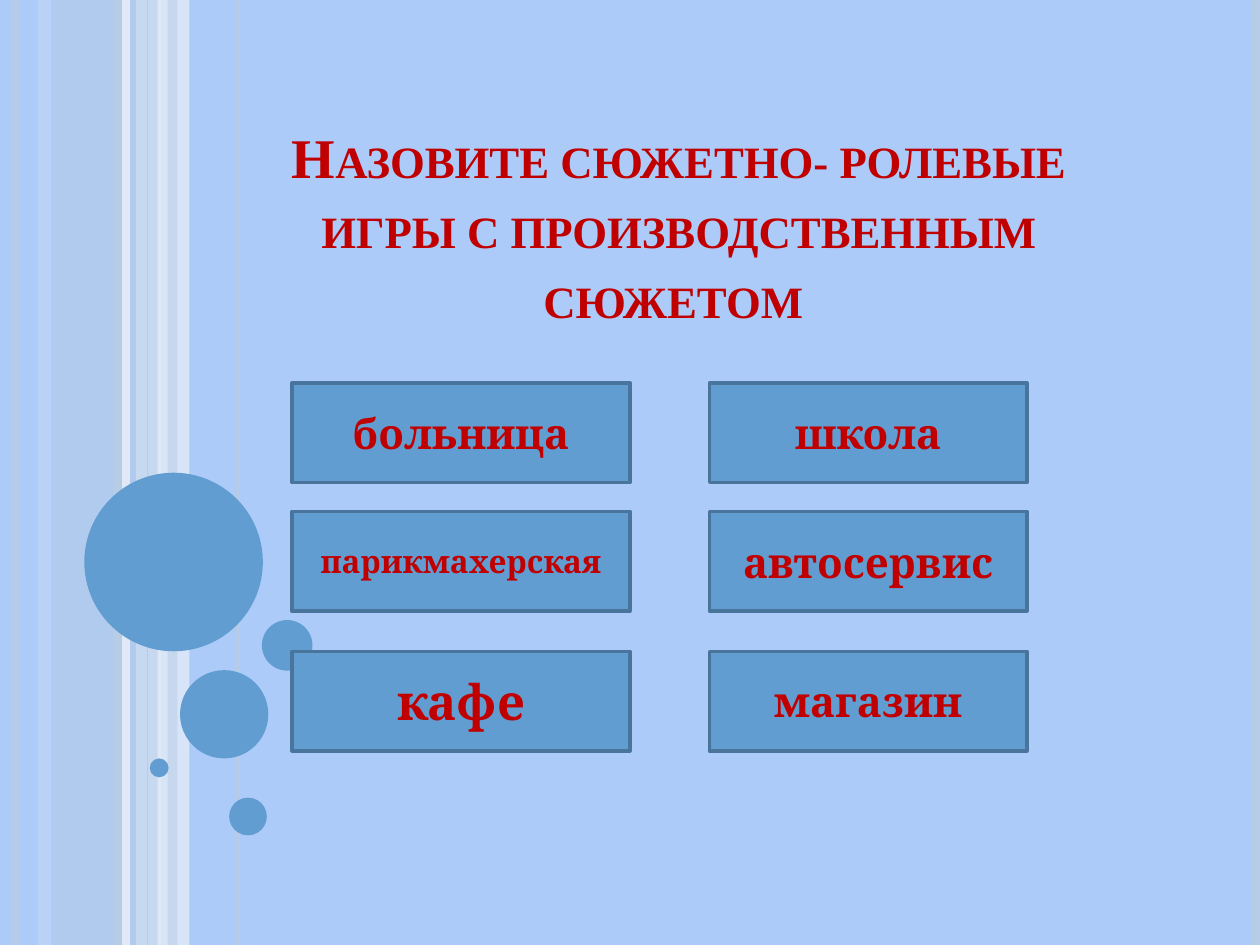
from pptx import Presentation
from pptx.dml.color import RGBColor
from pptx.enum.shapes import MSO_CONNECTOR, MSO_SHAPE
from pptx.enum.text import MSO_ANCHOR, MSO_AUTO_SIZE, PP_ALIGN
from pptx.oxml.ns import qn
from pptx.util import Cm, Pt
from lxml.etree import SubElement

# Content
TITLE = "Назовите сюжетно- ролевые игры с производственным сюжетом\u00a0"
GAMES = [  # rows of (name, text size)
    [("больница", 24), ("школа", 24)],
    [("парикмахерская", 18), ("автосервис", 24)],
    [("кафе", 28), ("магазин", 24)],
]

# Layout in centimetres
WIDTH, HEIGHT = 25.4, 19.05
TITLE_BOX = {"left": 5.11, "top": 1.52, "width": 17.15, "height": 5.26}
COLUMNS = [(5.89, 6.81), (14.3, 6.4)]  # left, width
ROW_TOPS = [7.72, 10.31, 13.13]
BOX_HEIGHT = 2.01
BANDS = [  # left, width, colour, opacity %
    (1.07, 1.7, "B7CCE5", 54),
    (0.76, 0.28, "D3DFEE", 36),
    (2.74, 0.51, "D3DFEE", 70),
    (3.18, 0.64, "EAEFF7", 71),
]
STRIPES = [  # x, line width in points, colour, opacity %
    (0.3, 4.5, "B7CCE5", 73),
    (2.54, 4.5, "EAEFF7", 83),
    (2.36, 4.5, "B7CCE5", 100),
    (4.8, 2.25, "B7CCE5", 82),
    (2.97, 0.75, "B7CCE5", 100),
    (25.32, 4.5, "B7CCE5", 100),
]
FRONT_BAND = (3.38, 0.2, "B7CCE5", 51)
CIRCLES = [  # left, top, diameter
    (1.7, 9.53, 3.6),
    (3.63, 13.51, 1.78),
    (3.02, 15.29, 0.38),
    (4.62, 16.08, 0.76),
    (5.28, 12.5, 1.02),
]
BACKGROUND, BLUE, BORDER, RED = "ACCBF9", "629DD1", "49749B", "C00000"


def paint(fill, colour, opacity=100):
    fill.solid()
    fill.fore_color.rgb = RGBColor.from_string(colour)
    if opacity < 100:
        colour_element = fill._xPr.find(qn("a:solidFill"))[0]
        SubElement(colour_element, qn("a:alpha"), val=str(opacity * 1000))


def add_plain_shape(kind, left, top, width, height, colour, opacity=100):
    shape = slide.shapes.add_shape(kind, Cm(left), Cm(top), Cm(width), Cm(height))
    shape.shadow.inherit = False
    paint(shape.fill, colour, opacity)
    shape.line.fill.background()
    return shape


def add_band(left, width, colour, opacity):
    add_plain_shape(MSO_SHAPE.RECTANGLE, left, 0, width, HEIGHT, colour, opacity)


def write(frame, text, font_name, size, anchor):
    frame.word_wrap = True
    frame.auto_size = MSO_AUTO_SIZE.NONE
    frame.vertical_anchor = anchor
    paragraph = frame.paragraphs[0]
    paragraph.alignment = PP_ALIGN.CENTER
    run = paragraph.add_run()
    run.text = text
    for name, value in {"name": font_name, "size": Pt(size), "bold": True}.items():
        setattr(run.font, name, value)
    paint(run.font.fill, RED)
    return run


presentation = Presentation()
presentation.slide_width, presentation.slide_height = Cm(WIDTH), Cm(HEIGHT)
slide = presentation.slides.add_slide(presentation.slide_layouts[5])
paint(slide.background.fill, BACKGROUND)

# Vertical bands and stripes
for band in BANDS:
    add_band(*band)
for x, weight, colour, opacity in STRIPES:
    stripe = slide.shapes.add_connector(
        MSO_CONNECTOR.STRAIGHT, Cm(x), Cm(0), Cm(x), Cm(HEIGHT))
    stripe.line.width = Pt(weight)
    paint(stripe.line.fill, colour, opacity)
    SubElement(stripe._element.spPr, qn("a:effectLst"))
add_band(*FRONT_BAND)

# Circles
for left, top, diameter in CIRCLES:
    add_plain_shape(MSO_SHAPE.OVAL, left, top, diameter, diameter, BLUE)

# Title in small capitals
title = slide.shapes.title
for name, value in TITLE_BOX.items():
    setattr(title, name, Cm(value))
title_run = write(title.text_frame, TITLE, "Times New Roman", 32, MSO_ANCHOR.BOTTOM)
title_run._r.get_or_add_rPr().set("cap", "small")
title.text_frame.paragraphs[0].line_spacing = 1.04

# Grid of games
for top, row in zip(ROW_TOPS, GAMES):
    for (left, width), (game, size) in zip(COLUMNS, row):
        box = add_plain_shape(
            MSO_SHAPE.RECTANGLE, left, top, width, BOX_HEIGHT, BLUE)
        paint(box.line.fill, BORDER)
        box.line.width = Pt(2)
        write(box.text_frame, game, "Cambria", size, MSO_ANCHOR.MIDDLE)

presentation.save("out.pptx")
